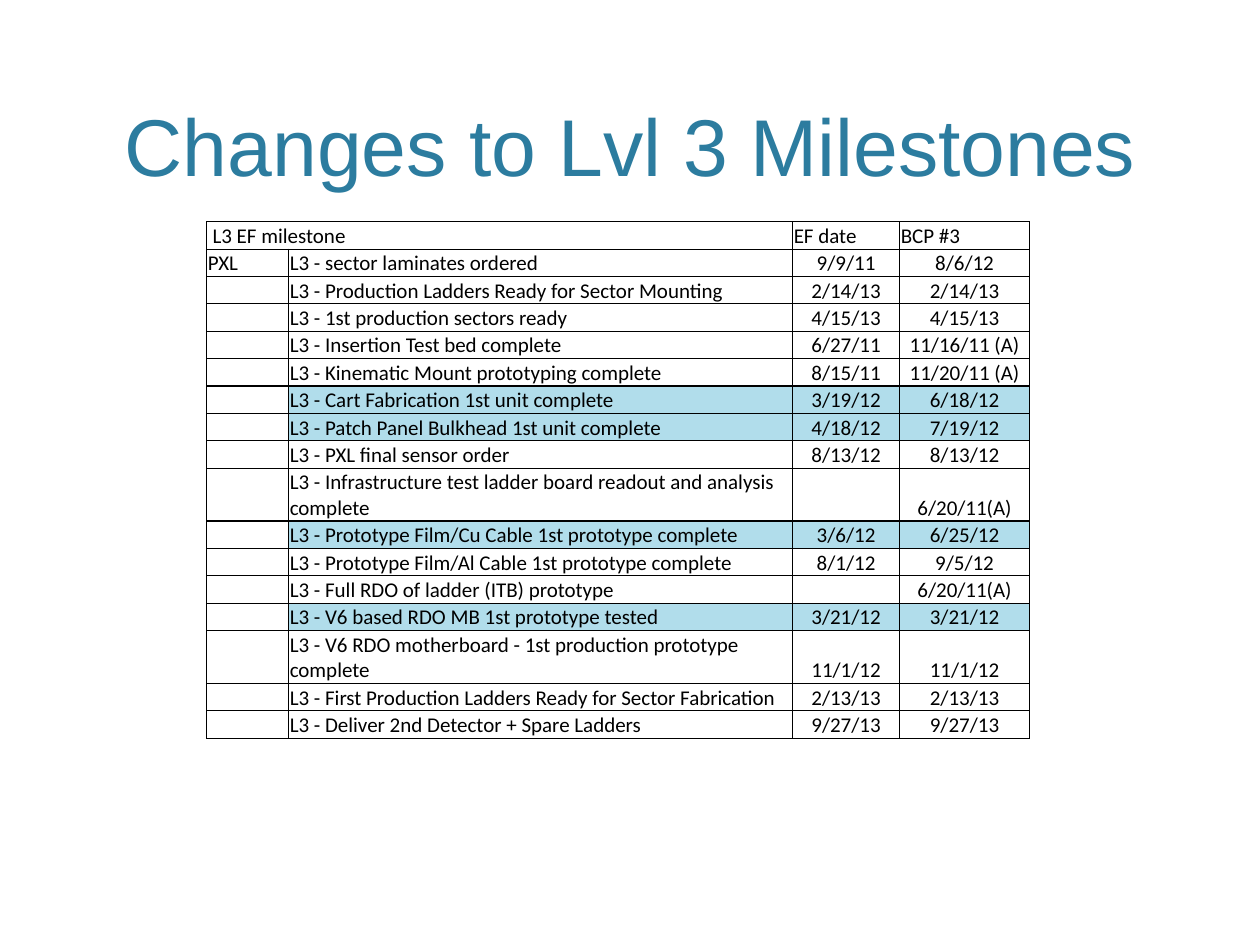
import dataclasses

import lxml.etree
import pptx
import pptx.dml.color
import pptx.enum.text
import pptx.oxml.ns
import pptx.util

Pt = pptx.util.Pt
RGB = pptx.dml.color.RGBColor.from_string
ALIGN = pptx.enum.text.PP_ALIGN
ANCHOR = pptx.enum.text.MSO_ANCHOR
qn = pptx.oxml.ns.qn


@dataclasses.dataclass(frozen=True)
class Theme:
    """Colours, fonts and sizes of the slide."""
    title_color: str = "2C7C9F"
    text_color: str = "000000"
    plain: str = "FFFFFF"
    highlight: str = "B1DDEB"
    title_font: str = "Arial"
    table_font: str = "Calibri"
    title_size: float = 46
    table_size: float = 12
    border: float = 0.75
    inset: float = 0.7
    line_height: float = 15.66
    wrapped_height: float = 30.2


THEME = Theme()
COLUMNS = (46.8, 288, 61.2, 74.2)
HEADER = (" L3 EF milestone", "", "EF date", "BCP #3")
MILESTONES = (
    ("L3 - sector laminates ordered", "9/9/11", "8/6/12"),
    ("L3 - Production Ladders Ready for Sector Mounting", "2/14/13", "2/14/13"),
    ("L3 - 1st production sectors ready", "4/15/13", "4/15/13"),
    ("L3 - Insertion Test bed complete", "6/27/11", "11/16/11 (A)"),
    ("L3 - Kinematic Mount prototyping complete", "8/15/11", "11/20/11 (A)"),
    ("L3 - Cart Fabrication 1st unit complete", "3/19/12", "6/18/12"),
    ("L3 - Patch Panel Bulkhead 1st unit complete", "4/18/12", "7/19/12"),
    ("L3 - PXL final sensor order", "8/13/12", "8/13/12"),
    ("L3 - Infrastructure test ladder board readout and analysis complete", "", "6/20/11(A)"),
    ("L3 - Prototype Film/Cu Cable 1st prototype complete", "3/6/12", "6/25/12"),
    ("L3 - Prototype Film/Al Cable 1st prototype complete", "8/1/12", "9/5/12"),
    ("L3 - Full RDO of ladder (ITB) prototype", "", "6/20/11(A)"),
    ("L3 - V6 based RDO MB 1st prototype tested", "3/21/12", "3/21/12"),
    ("L3 - V6 RDO motherboard - 1st production prototype complete", "11/1/12", "11/1/12"),
    ("L3 - First Production Ladders Ready for Sector Fabrication", "2/13/13", "2/13/13"),
    ("L3 - Deliver 2nd Detector + Spare Ladders", "9/27/13", "9/27/13"),
)
HIGHLIGHTED = {6, 7, 10, 13}
WRAPPED = {9, 14}


def add_run(p, text, font, size, color):
    """Add one formatted run to a paragraph."""
    r = p.add_run()
    r.text = text
    r.font.name = font
    r.font.size = Pt(size)
    r.font.color.rgb = RGB(color)


def add_title(s, text, left, top, width, height):
    """Place the centred title at the bottom of its box."""
    tf = s.shapes.add_textbox(Pt(left), Pt(top), Pt(width), Pt(height)).text_frame
    tf.word_wrap = True
    tf.vertical_anchor = ANCHOR.BOTTOM
    p = tf.paragraphs[0]
    p.alignment = ALIGN.CENTER
    add_run(p, text, THEME.title_font, THEME.title_size, THEME.title_color)


def set_borders(cell):
    """Draw a thin line on all four sides of a cell."""
    props = cell._tc.get_or_add_tcPr()
    for i, side in enumerate(("a:lnL", "a:lnR", "a:lnT", "a:lnB")):
        ln = lxml.etree.Element(qn(side), w=str(Pt(THEME.border)))
        fill = lxml.etree.SubElement(ln, qn("a:solidFill"))
        lxml.etree.SubElement(fill, qn("a:srgbClr"), val=THEME.text_color)
        props.insert(i, ln)


def fill_cell(cell, text, align, fill):
    """Set the text, insets, fill and borders of a cell."""
    cell.margin_left = cell.margin_right = cell.margin_top = Pt(THEME.inset)
    cell.margin_bottom = 0
    cell.vertical_anchor = ANCHOR.BOTTOM
    cell.fill.solid()
    cell.fill.fore_color.rgb = RGB(fill)
    set_borders(cell)
    p = cell.text_frame.paragraphs[0]
    p.alignment = align
    if text:
        add_run(p, text, THEME.table_font, THEME.table_size, THEME.text_color)
    else:
        lxml.etree.SubElement(p._p, qn("a:endParaRPr"), sz=str(THEME.table_size * 100))


def add_milestones(s, left, top):
    """Place the milestone table with its top left corner at the given point."""
    rows = [HEADER] + [("" if i else "PXL", *row) for i, row in enumerate(MILESTONES)]
    heights = [THEME.wrapped_height if i in WRAPPED else THEME.line_height
               for i in range(len(rows))]
    table = s.shapes.add_table(len(rows), len(COLUMNS), Pt(left), Pt(top),
                               Pt(sum(COLUMNS)), Pt(sum(heights))).table
    table.first_row = table.horz_banding = False
    for column, width in zip(table.columns, COLUMNS):
        column.width = Pt(width)
    for i, (row, height) in enumerate(zip(rows, heights)):
        table.rows[i].height = Pt(height)
        for j, text in enumerate(row):
            align = ALIGN.CENTER if i and j > 1 else ALIGN.LEFT
            fill = THEME.highlight if i in HIGHLIGHTED and j else THEME.plain
            fill_cell(table.cell(i, j), text, align, fill)
    table.cell(0, 0).merge(table.cell(0, 1))


def main():
    """Build and save the slide."""
    prs = pptx.Presentation()
    prs.slide_width, prs.slide_height = Pt(720), Pt(540)
    s = prs.slides.add_slide(prs.slide_layouts[6])
    add_title(s, "Changes to Lvl 3 Milestones", 43.2, 8.6, 633.6, 105.2)
    add_milestones(s, 118.1, 126.7)
    prs.save("out.pptx")


if __name__ == "__main__":
    main()
